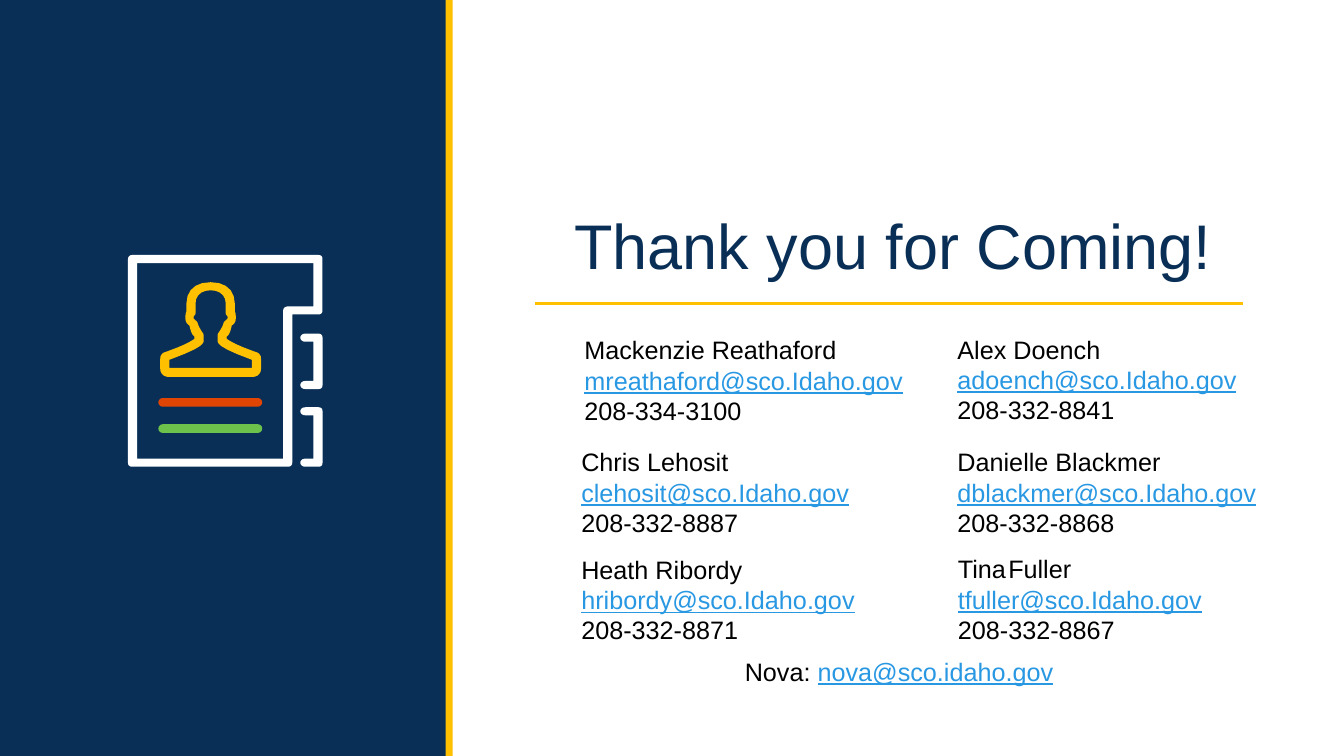
"""Build a closing slide with a contact-book icon and a grid of contacts."""
from dataclasses import dataclass

from lxml import etree
from pptx import Presentation
from pptx.dml.color import RGBColor
from pptx.enum.shapes import MSO_CONNECTOR, MSO_SHAPE
from pptx.enum.text import MSO_ANCHOR, MSO_AUTO_SIZE, PP_ALIGN
from pptx.oxml.ns import qn
from pptx.util import Cm, Pt

RECT = MSO_SHAPE.RECTANGLE
PILL = MSO_SHAPE.ROUNDED_RECTANGLE
STRAIGHT = MSO_CONNECTOR.STRAIGHT
LEFT = PP_ALIGN.LEFT
BOTTOM = MSO_ANCHOR.BOTTOM
FIXED = MSO_AUTO_SIZE.NONE


@dataclass(frozen=True)
class Theme:
    navy: RGBColor = RGBColor.from_string("092F57")
    gold: RGBColor = RGBColor.from_string("FFC000")
    white: RGBColor = RGBColor.from_string("FFFFFF")
    black: RGBColor = RGBColor.from_string("000000")
    blue: RGBColor = RGBColor.from_string("2998E3")
    green: RGBColor = RGBColor.from_string("6CC24A")
    red: RGBColor = RGBColor.from_string("E14504")
    font: str = "Arial"
    head: Pt = Pt(45)
    body: Pt = Pt(18)


theme = Theme()


def write(para, text, size=theme.body, color=theme.black, under=False):
    run = para.add_run()
    run.text = text
    run.font.name = theme.font
    run.font.size = size
    run.font.color.rgb = color
    run.font.underline = under


def trace(path):
    points = [path[0]]
    for step in path[1:]:
        if len(step) == 2:
            points.append(step)
            continue
        x0, y0 = points[-1]
        x1, y1, x2, y2, x3, y3 = step
        for t in (0.2, 0.4, 0.6, 0.8, 1):
            a, b, c, d = (1 - t) ** 3, 3 * t * (1 - t) ** 2, 3 * t * t * (1 - t), t ** 3
            points.append((a * x0 + b * x1 + c * x2 + d * x3,
                           a * y0 + b * y1 + c * y2 + d * y3))
    return points


deck = Presentation()
deck.slide_width, deck.slide_height = Cm(33.87), Cm(19.05)
slide = deck.slides.add_slide(deck.slide_layouts[5])
shapes = slide.shapes

title = shapes.title
title.left, title.top, title.width, title.height = Cm(14.22), Cm(5.05), Cm(18.16), Cm(2.18)
title.text_frame.auto_size = FIXED
title.text_frame.vertical_anchor = BOTTOM
head = title.text_frame.paragraphs[0]
head.alignment = LEFT
write(head, "Thank you for Coming!", size=theme.head, color=theme.navy)

for kind, left, top, width, height, color in (
    (RECT, 0, 0, 11.25, 19.05, theme.navy),
    (RECT, 11.23, 0, 0.18, 19.05, theme.gold),
    (PILL, 3.99, 10.69, 2.62, 0.22, theme.green),
    (PILL, 3.99, 10.03, 2.62, 0.22, theme.red),
):
    block = shapes.add_shape(kind, Cm(left), Cm(top), Cm(width), Cm(height))
    block.shadow.inherit = False
    block.fill.solid()
    block.fill.fore_color.rgb = color
    block.line.fill.background()
    if kind == PILL:
        block.adjustments[0] = 0.5

rule = shapes.add_connector(STRAIGHT, Cm(13.47), Cm(7.65), Cm(31.32), Cm(7.65))
rule.line.color.rgb = theme.gold
rule.line.width = Pt(2.25)
etree.SubElement(rule._element.spPr, qn("a:effectLst"))

book = [
    trace([(316, 253), (131, 253), (129, 253, 127, 255, 127, 257), (127, 459),
           (127, 462, 129, 463, 131, 463), (286, 463), (288, 463, 290, 462, 290, 459),
           (290, 312), (316, 312), (319, 312, 320, 310, 320, 308), (320, 257),
           (320, 255, 319, 253, 316, 253)]),
    trace([(311, 304), (286, 304), (283, 304, 281, 306, 281, 308), (281, 455),
           (136, 455), (136, 261), (311, 261)]),
]

person = []
for half in (
    [(209, 280), (194, 280, 185, 288, 185, 301), (185, 309),
     (184, 311, 184, 313, 184, 315), (184, 319, 185, 321, 188, 323),
     (189, 327, 190, 332, 193, 334), (193, 336), (192, 337, 187, 341, 165, 349),
     (161, 350, 159, 352, 159, 356), (159, 366), (159, 371, 163, 374, 167, 374)],
    [(209, 288), (200, 288, 194, 293, 194, 301), (194, 311),
     (194, 313, 192, 313, 192, 315), (192, 317, 195, 318, 196, 320),
     (197, 324, 199, 327, 201, 330), (202, 331, 202, 332, 202, 333), (202, 337),
     (202, 338, 202, 338, 202, 339), (201, 342, 198, 346, 168, 357), (168, 365)],
):
    side = trace(half)
    person.append(side + [(418 - x, y) for x, y in reversed(side)])

tabs = []
for top, base in ((331, 386), (404, 463)):
    side = trace([(311, top + 8), (303, top + 8),
                  (300, top + 8, 298, top + 6, 298, top + 4),
                  (298, top + 2, 300, top, 303, top), (316, top),
                  (319, top, 320, top + 2, 320, top + 4)])
    tabs.append([side + [(x, top + base - y) for x, y in reversed(side)]])

icon = shapes.add_group_shape()
for loops, color in ((book, theme.white), (tabs[0], theme.white),
                     (tabs[1], theme.white), (person, theme.gold)):
    pen = None
    for loop in loops:
        spots = [(x * 10, y * 10) for x, y in loop]
        if pen is None:
            pen = icon.shapes.build_freeform(*spots[0], scale=Cm(2.54) / 1000)
        else:
            pen.move_to(*spots[0])
        pen.add_line_segments(spots[1:], close=True)
    form = pen.convert_to_shape()
    form.shadow.inherit = False
    form.fill.solid()
    form.fill.fore_color.rgb = color
    form.line.fill.background()

people = (
    (14.48, 8.31, "Mackenzie Reathaford", "mreathaford", "208-334-3100"),
    (23.88, 8.29, "Alex Doench", "adoench", "208-332-8841"),
    (14.4, 11.13, "Chris Lehosit", "clehosit", "208-332-8887"),
    (23.88, 11.13, "Danielle Blackmer", "dblackmer", "208-332-8868"),
    (14.4, 13.84, "Heath Ribordy", "hribordy", "208-332-8871"),
    (23.89, 13.83, "Tina\tFuller", "tfuller", "208-332-8867"),
)
cards = shapes.add_group_shape()
for left, top, name, user, phone in people:
    frame = cards.shapes.add_textbox(Cm(left), Cm(top), Cm(8.74), Cm(2.57)).text_frame
    frame.word_wrap = True
    mail = f"{user}@sco.Idaho.gov"
    for row, text in enumerate((name, mail, phone)):
        para = frame.add_paragraph() if row else frame.paragraphs[0]
        para._p.get_or_add_pPr().set("defTabSz", str(Cm(1.27)))
        linked = text == mail
        write(para, text, color=theme.blue if linked else theme.black, under=linked)

frame = cards.shapes.add_textbox(Cm(18.52), Cm(16.41), Cm(8.53), Cm(1.02)).text_frame
frame.word_wrap = True
para = frame.paragraphs[0]
write(para, "Nova: ")
write(para, "nova@sco.idaho.gov", color=theme.blue, under=True)

deck.save("out.pptx")
